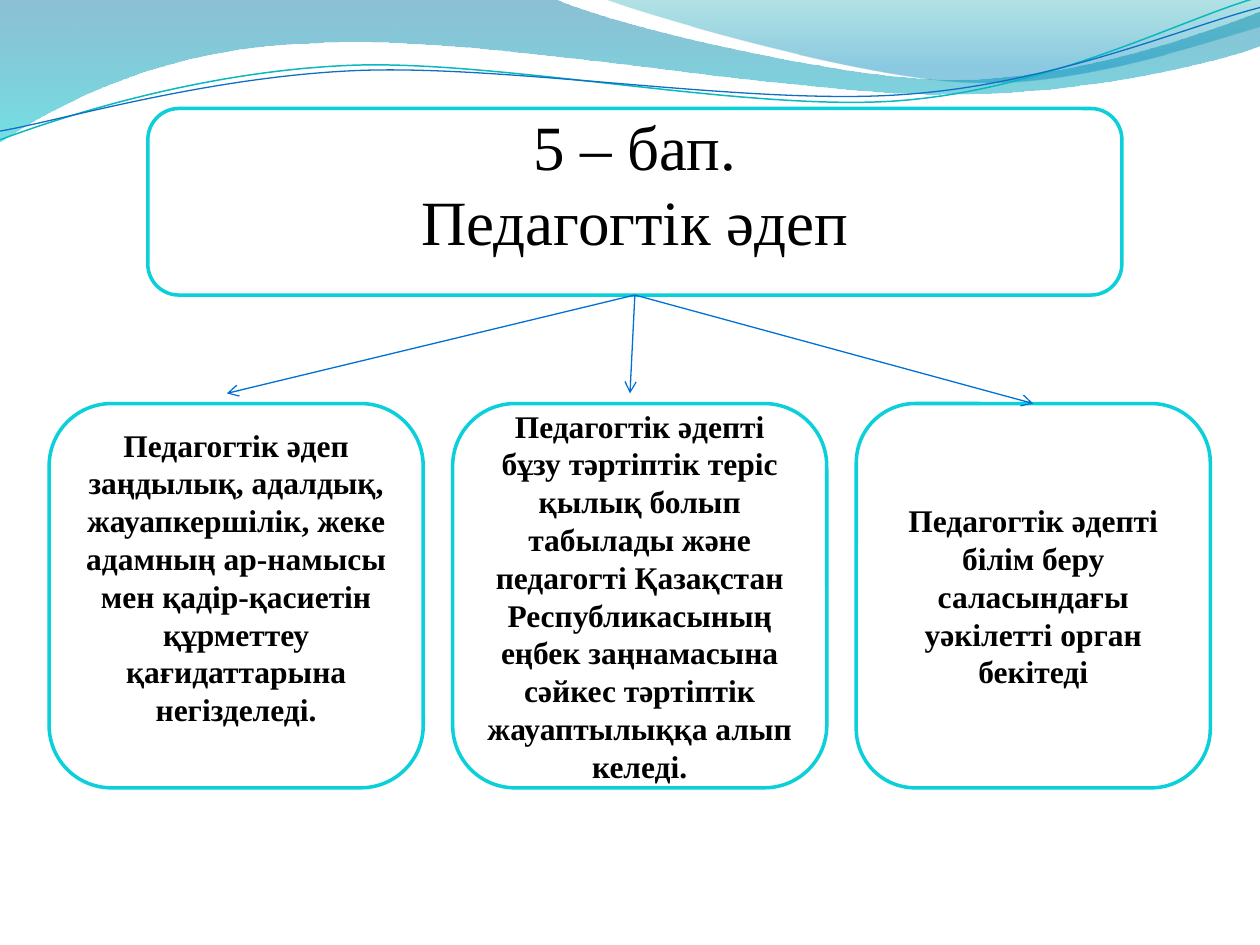
from typing import NamedTuple

from lxml.etree import SubElement
from pptx import Presentation
from pptx.dml.color import RGBColor
from pptx.enum.shapes import MSO_CONNECTOR, MSO_SHAPE
from pptx.enum.text import MSO_ANCHOR, PP_ALIGN
from pptx.oxml.ns import qn
from pptx.util import Pt

FONT = "Times New Roman"
BORDER = "0BD0D9"
ARROW = "0070D5"
BLANK_LINE = 21.6

Point = tuple[float, float]


class Stop(NamedTuple):
    position: float
    color: str
    opacity: int


class Wave(NamedTuple):
    """Each segment holds one point for a straight line, three for a cubic curve."""
    start: Point
    segments: list[tuple[Point, ...]]
    stops: tuple[Stop, ...] = ()
    line_color: str = ""
    line_width: float = 0


class Card(NamedTuple):
    left: float
    top: float
    width: float
    height: float
    lines: list[str]
    size: float
    bold: bool = False
    space_below: float = 0


WAVES = [
    Wave((0, 0), [
        ((316.8, -0.7),),
        ((342.7, 12.2), (478.1, 45.4), (545.8, 45.4)),
        ((614.2, 45.4), (689.8, 18.7), (720, 6.5)),
        ((720.7, 25.9),),
        ((707.8, 31.7), (626.4, 54.7), (537.1, 54)),
        ((447.8, 54), (275, 20.2), (185, 24.5)),
        ((92.9, 25.9), (33.1, 59.8), (-0.7, 81.4)),
    ], stops=(Stop(0, "0074A1", 45), Stop(1, "00C6CF", 55))),
    Wave((344.9, -0.7), [
        ((366.5, 7.9), (491, 44.6), (553.7, 46.8)),
        ((616.3, 49.7), (691.9, 23), (720, 15.1)),
        ((720, 0),),
    ], stops=(Stop(0, "00A1A9", 30), Stop(0.8, "008BBF", 45))),
    Wave((0, 79.9), [
        ((34.6, 67), (113.8, 41), (199.4, 37.4)),
        ((284.4, 33.8), (427, 64.1), (513.4, 57.6)),
        ((599.8, 51.1), (675.4, 10.8), (718.6, -1.4)),
    ], line_color="0AB8BF", line_width=0.85),
    Wave((0, 74.9), [
        ((33.8, 69.1), (118.1, 43.9), (203.8, 40.3)),
        ((290.2, 36.7), (429.8, 60.5), (516.2, 54)),
        ((601.9, 48.2), (677.5, 15.1), (720, 4.3)),
    ], line_color="0F6FC6", line_width=0.75),
]

TITLE = Card(84.5, 62, 556.6, 106.6, ["5 – бап.", "Педагогтік әдеп"], 36,
             space_below=BLANK_LINE)

CARD_LEFT, CARD_TOP, CARD_HEIGHT, CARD_GAP = 28.1, 230.6, 219.6, 16.8
# Width, text and extra space below the text
RULES = [
    (213.8, "Педагогтік әдеп заңдылық, адалдық, жауапкершілік, жеке адамның "
            "ар-намысы мен қадір-қасиетін құрметтеу қағидаттарына негізделеді.",
     BLANK_LINE),
    (213.8, "Педагогтік әдепті бұзу тәртіптік теріс қылық болып табылады және "
            "педагогті Қазақстан Республикасының еңбек заңнамасына сәйкес "
            "тәртіптік жауаптылыққа алып келеді.", 0),
    (202.3, "Педагогтік әдепті білім беру саласындағы уәкілетті орган бекітеді", 0),
]

ARROW_START = (TITLE.left + TITLE.width / 2, TITLE.top + TITLE.height)
ARROW_ENDS = [(129.6, 224.8), (590.4, CARD_TOP), (360, 224.8)]


def color(value: str) -> RGBColor:
    return RGBColor.from_string(value)


def bend(shape, segments: list[tuple[Point, ...]]) -> None:
    """Replace straight segments by cubic curves where control points are given."""
    straight_lines = list(shape._element.iter(qn("a:lnTo")))
    for straight, segment in zip(straight_lines, segments):
        if len(segment) == 1:
            continue
        curve = SubElement(straight.getparent(), qn("a:cubicBezTo"))
        for x, y in segment:
            point = SubElement(curve, qn("a:pt"))
            point.set("x", str(Pt(x) - shape.left))
            point.set("y", str(Pt(y) - shape.top))
        straight.getparent().replace(straight, curve)


def fill_gradient(shape, stops: tuple[Stop, ...]) -> None:
    shape.fill.gradient()
    shape.fill.gradient_angle = 270
    for target, stop in zip(shape.fill.gradient_stops, stops):
        target.position = stop.position
        target.color.rgb = color(stop.color)
    for element, stop in zip(shape._element.spPr.iter(qn("a:srgbClr")), stops):
        SubElement(element, qn("a:alpha")).set("val", str(stop.opacity * 1000))


def draw_wave(page, wave: Wave) -> None:
    first, *rest = [(Pt(x), Pt(y))
                    for x, y in (wave.start, *(segment[-1] for segment in wave.segments))]
    builder = page.shapes.build_freeform(*first, scale=1.0)
    builder.add_line_segments(rest, close=bool(wave.stops))
    shape = builder.convert_to_shape()
    bend(shape, wave.segments)
    shape.shadow.inherit = False
    if wave.stops:
        fill_gradient(shape, wave.stops)
        shape.line.fill.background()
    else:
        shape.fill.background()
        shape.line.color.rgb = color(wave.line_color)
        shape.line.width = Pt(wave.line_width)


def draw_card(page, card: Card) -> None:
    box = page.shapes.add_shape(MSO_SHAPE.ROUNDED_RECTANGLE, Pt(card.left), Pt(card.top),
                                Pt(card.width), Pt(card.height))
    box.shadow.inherit = False
    box.fill.solid()
    box.fill.fore_color.rgb = color("FFFFFF")
    box.line.color.rgb = color(BORDER)
    box.line.width = Pt(2)
    frame = box.text_frame
    frame.word_wrap = True
    frame.vertical_anchor = MSO_ANCHOR.MIDDLE
    frame.margin_bottom = Pt(3.6 + card.space_below)
    frame.text = "\n".join(card.lines)
    for para in frame.paragraphs:
        para.alignment = PP_ALIGN.CENTER
        para.font.name = FONT
        para.font.size = Pt(card.size)
        para.font.bold = card.bold
        para.font.color.rgb = color("000000")


def draw_arrow(page, start: Point, end: Point) -> None:
    arrow = page.shapes.add_connector(MSO_CONNECTOR.STRAIGHT,
                                      *(Pt(value) for value in (*start, *end)))
    arrow.line.color.rgb = color(ARROW)
    arrow.line.width = Pt(0.75)
    properties = arrow._element.spPr
    SubElement(properties.find(qn("a:ln")), qn("a:tailEnd")).set("type", "arrow")
    SubElement(properties, qn("a:effectLst"))


def main() -> None:
    deck = Presentation()
    deck.slide_width, deck.slide_height = Pt(720), Pt(540)
    page = deck.slides.add_slide(deck.slide_layouts[6])
    for wave in WAVES:
        draw_wave(page, wave)
    draw_card(page, TITLE)
    left = CARD_LEFT
    for width, text, space_below in RULES:
        draw_card(page, Card(left, CARD_TOP, width, CARD_HEIGHT, [text], 18, True, space_below))
        left += width + CARD_GAP
    for end in ARROW_ENDS:
        draw_arrow(page, ARROW_START, end)
    deck.save("out.pptx")


if __name__ == "__main__":
    main()
